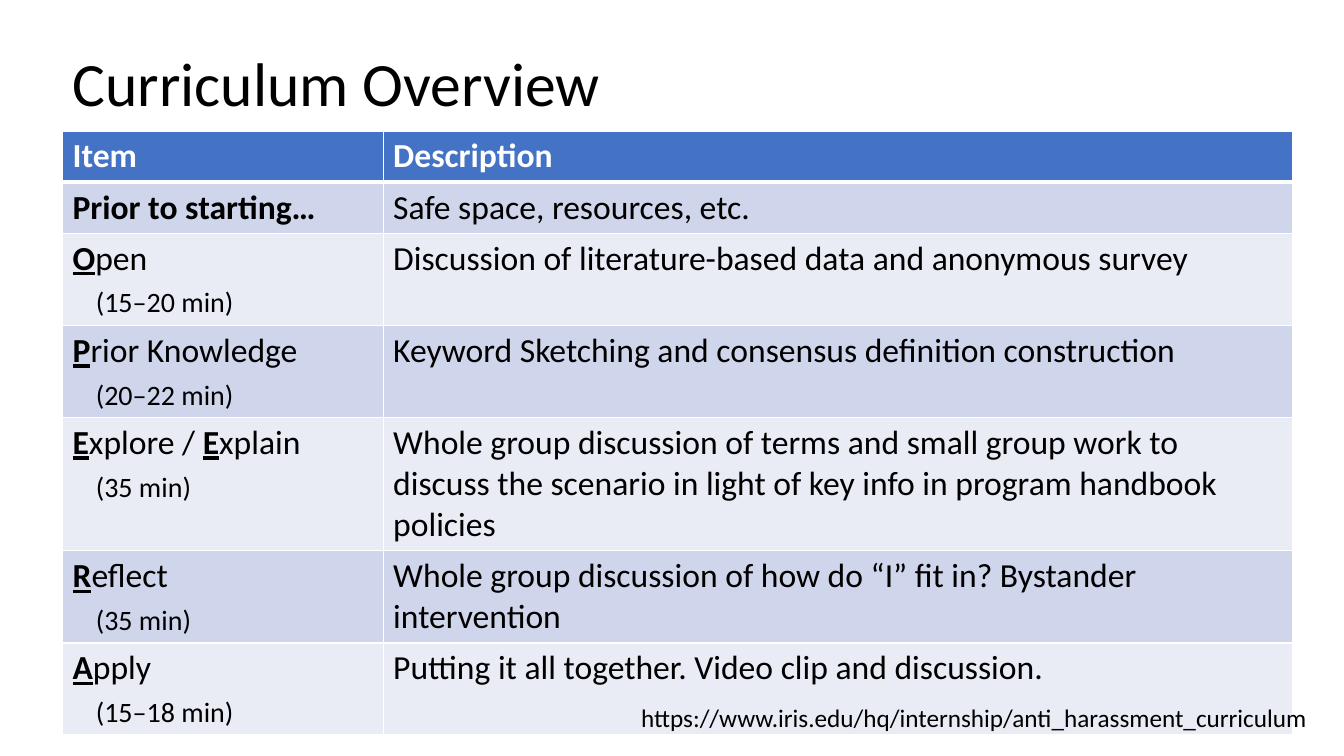
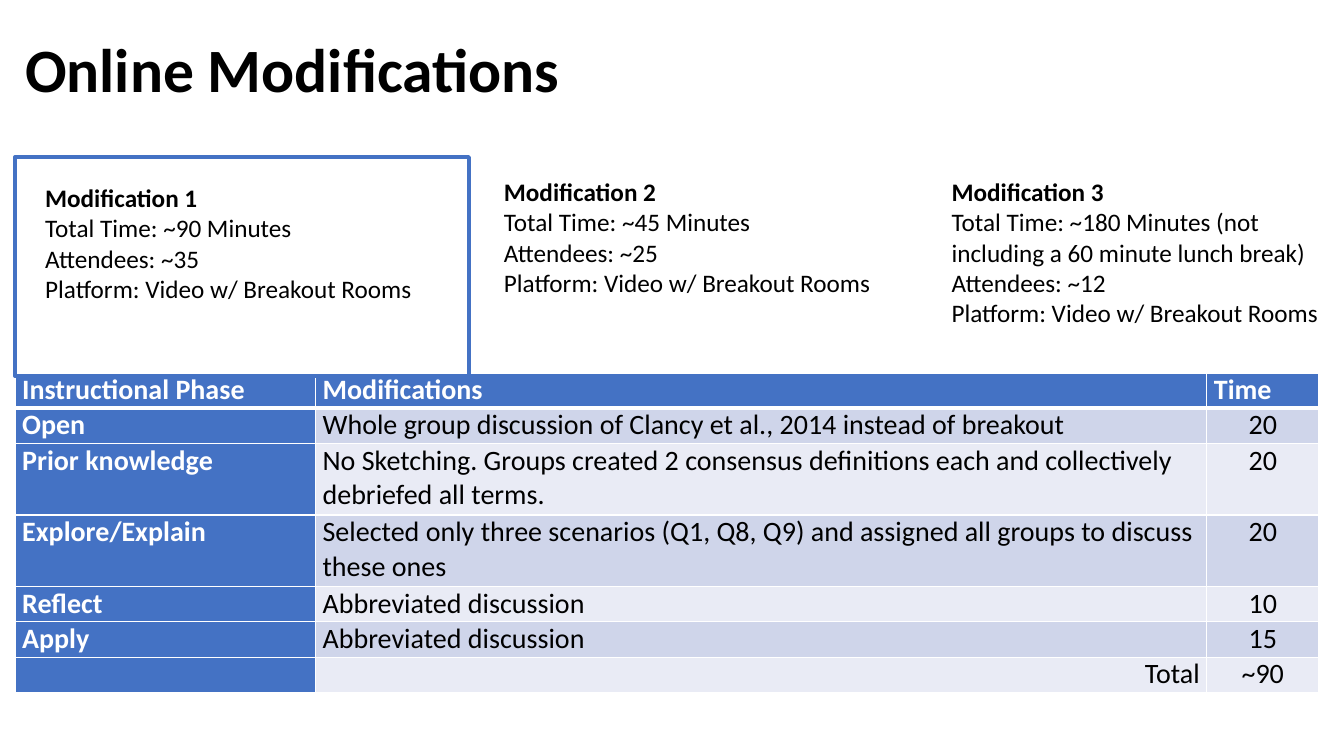
from dataclasses import dataclass

import lxml.etree
import pptx
import pptx.dml.color
import pptx.enum.shapes
import pptx.enum.text
import pptx.oxml.ns
import pptx.util

Inches, Pt = pptx.util.Inches, pptx.util.Pt
ALIGN = pptx.enum.text.PP_ALIGN
FONT = "Calibri"
COLORS = {"text": "000000", "white": "FFFFFF", "accent": "4472C4",
          "band_dark": "CFD5EA", "band_light": "E9EBF5"}


@dataclass
class TextBox:
    left: float
    top: float
    width: float
    height: float
    lines: list[str]
    bold_first: bool = True
    wrap: bool = True


@dataclass
class TableSpec:
    left: float
    top: float
    widths: list[float]
    heights: list[float]
    rows: list[tuple[str, ...]]
    size: int
    margin_x: float
    margin_y: float
    bold_labels: range  # rows whose first cell is bold
    label_fill: bool = False  # first column filled like the header


# Asterisks mark bold underlined letters; a second line holds the duration.
CURRICULUM = TableSpec(
    0.62, 1.3, [3.18, 9.02], [0.5, 0.51, 0.91, 0.91, 1.32, 0.91, 0.91],
    [("Item", "Description"),
     ("Prior to starting…", "Safe space, resources, etc."),
     ("*O*pen\n(15–20 min)",
      "Discussion of literature-based data and anonymous survey"),
     ("*P*rior Knowledge\n(20–22 min)",
      "Keyword Sketching and consensus definition construction"),
     ("*E*xplore / *E*xplain\n(35 min)",
      "Whole group discussion of terms and small group work to discuss "
      "the scenario in light of key info in program handbook policies"),
     ("*R*eflect\n(35 min)",
      "Whole group discussion of how do “I” fit in? Bystander intervention"),
     ("*A*pply\n(15–18 min)",
      "Putting it all together. Video clip and discussion.")],
    size=24, margin_x=0.1, margin_y=0.05, bold_labels=range(2))

PHASES = TableSpec(
    0.15, 3.7, [2.98, 8.84, 1.11], [0.35, 0.35, 0.71, 0.71, 0.35, 0.35, 0.35],
    [("Instructional Phase", "Modifications", "Time"),
     ("Open",
      "Whole group discussion of Clancy et al., 2014 instead of breakout", "20"),
     ("Prior knowledge",
      "No Sketching. Groups created 2 consensus definitions each and "
      "collectively debriefed all terms.", "20"),
     ("Explore/Explain",
      "Selected only three scenarios (Q1, Q8, Q9) and assigned all groups "
      "to discuss these ones", "20"),
     ("Reflect", "Abbreviated discussion", "10"),
     ("Apply", "Abbreviated discussion", "15"),
     ("", "Total", "~90")],
    size=20, margin_x=0.07, margin_y=0, bold_labels=range(7), label_fill=True)

PLATFORM = "Platform: Video w/ Breakout Rooms"
MODIFICATIONS = [
    TextBox(0.35, 1.76, 4.86, 1.62,
            ["Modification 1", "Total Time: ~90 Minutes", "Attendees: ~35",
             PLATFORM]),
    TextBox(4.9, 1.7, 3.87, 1.62,
            ["Modification 2", "Total Time: ~45 Minutes", "Attendees: ~25",
             PLATFORM], wrap=False),
    TextBox(9.34, 1.7, 3.86, 1.92,
            ["Modification 3",
             "Total Time: ~180 Minutes (not including a 60 minute lunch break)",
             "Attendees: ~12", PLATFORM]),
]
SOURCE = TextBox(
    6.26, 6.92, 6.89, 0.4,
    ["https://www.iris.edu/hq/internship/anti_harassment_curriculum"],
    bold_first=False, wrap=False)


def rgb(name: str) -> pptx.dml.color.RGBColor:
    return pptx.dml.color.RGBColor.from_string(COLORS[name])


def style(p, size: int, color: str = "text", bold: bool = False) -> None:
    p.font.name, p.font.size, p.font.bold = FONT, Pt(size), bold
    p.font.color.rgb = rgb(color)


def add_titled_slide(prs, title: str, left: float, top: float, width: float,
                     bold: bool = False):
    slide = prs.slides.add_slide(prs.slide_layouts[5])
    sp = slide.shapes.title
    sp.left, sp.top = Inches(left), Inches(top)
    sp.width, sp.height = Inches(width), Inches(1.45)
    tf = sp.text_frame
    tf.text = title
    tf.auto_size = pptx.enum.text.MSO_AUTO_SIZE.NONE
    tf.vertical_anchor = pptx.enum.text.MSO_ANCHOR.MIDDLE
    p = tf.paragraphs[0]
    p.alignment, p.line_spacing = ALIGN.LEFT, 0.9
    style(p, 44, bold=bold)
    return slide


def add_text_box(slide, box: TextBox) -> None:
    sp = slide.shapes.add_textbox(Inches(box.left), Inches(box.top),
                                  Inches(box.width), Inches(box.height))
    tf = sp.text_frame
    tf.text = "\n".join(box.lines)
    tf.word_wrap = box.wrap
    tf.auto_size = pptx.enum.text.MSO_AUTO_SIZE.SHAPE_TO_FIT_TEXT
    for i, p in enumerate(tf.paragraphs):
        style(p, 18, bold=box.bold_first and i == 0)


def set_borders(cell, top: float, bottom: float) -> None:
    tc_pr = cell._tc.get_or_add_tcPr()
    qn = pptx.oxml.ns.qn
    widths = {"lnL": 1, "lnR": 1, "lnT": top, "lnB": bottom}
    for i, (side, width) in enumerate(widths.items()):
        ln = lxml.etree.Element(qn(f"a:{side}"), w=str(Pt(width)))
        fill = lxml.etree.SubElement(ln, qn("a:solidFill"))
        lxml.etree.SubElement(fill, qn("a:srgbClr"), val=COLORS["white"])
        tc_pr.insert(i, ln)


def write_cell(cell, text: str, size: int, color: str, bold: bool) -> None:
    tf = cell.text_frame
    for i, line in enumerate(text.split("\n")):
        p = tf.add_paragraph() if i else tf.paragraphs[0]
        if i:  # indented duration line, as tall as the label line
            p._p.get_or_add_pPr().set("marL", str(Inches(0.23)))
            p.line_spacing = Pt(size * 1.22)
        style(p, size - 4 if i else size, color, bold)
        for j, part in enumerate(line.split("*")):
            if part:
                r = p.add_run()
                r.text = part
                if j % 2:
                    r.font.bold = r.font.underline = True


def add_table(slide, spec: TableSpec):
    table = slide.shapes.add_table(
        len(spec.rows), len(spec.widths), Inches(spec.left), Inches(spec.top),
        Inches(sum(spec.widths)), Inches(sum(spec.heights))).table
    for col, width in zip(table.columns, spec.widths):
        col.width = Inches(width)
    for row, height in zip(table.rows, spec.heights):
        row.height = Inches(height)
    for i, texts in enumerate(spec.rows):
        for j, text in enumerate(texts):
            cell = table.cell(i, j)
            cell.margin_left = cell.margin_right = Inches(spec.margin_x)
            cell.margin_top = cell.margin_bottom = Inches(spec.margin_y)
            accent = i == 0 or (spec.label_fill and j == 0)
            band = "band_dark" if i % 2 else "band_light"
            cell.fill.solid()
            cell.fill.fore_color.rgb = rgb("accent" if accent else band)
            set_borders(cell, 3 if i == 1 else 1, 3 if i == 0 else 1)
            bold = i == 0 or (j == 0 and i in spec.bold_labels)
            write_cell(cell, text, spec.size, "white" if accent else "text", bold)
    return table


def add_highlight(slide) -> None:
    sp = slide.shapes.add_shape(
        pptx.enum.shapes.MSO_SHAPE.RECTANGLE,
        Inches(0.15), Inches(1.56), Inches(4.5), Inches(2.17))
    sp.shadow.inherit = False
    sp.fill.background()
    sp.line.color.rgb = rgb("accent")
    sp.line.width = Pt(3)


def main() -> None:
    prs = pptx.Presentation()
    prs.slide_width, prs.slide_height = Inches(13.33), Inches(7.5)

    # Curriculum overview
    slide = add_titled_slide(prs, "Curriculum Overview", 0.62, 0.13, 11.73)
    add_table(slide, CURRICULUM)
    add_text_box(slide, SOURCE)

    # Online modifications
    slide = add_titled_slide(prs, "Online Modifications", 0.15, -0.01, 11.5,
                             bold=True)
    for box in MODIFICATIONS:
        add_text_box(slide, box)
    table = add_table(slide, PHASES)
    last = len(PHASES.rows) - 1
    for i in range(1, last + 1):
        table.cell(i, 2).text_frame.paragraphs[0].alignment = ALIGN.CENTER
    table.cell(last, 1).text_frame.paragraphs[0].alignment = ALIGN.RIGHT
    add_highlight(slide)

    prs.save("out.pptx")


if __name__ == "__main__":
    main()
